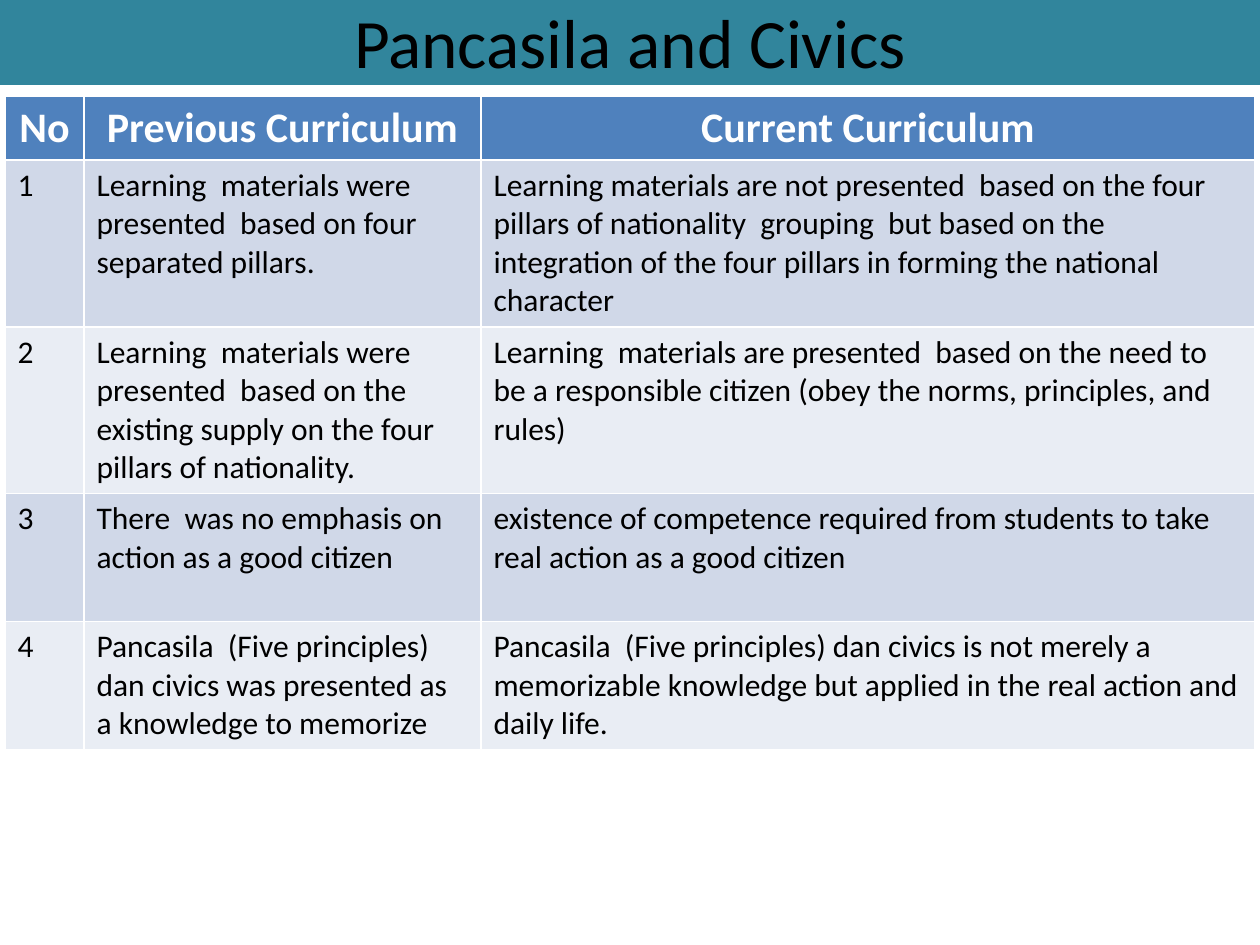
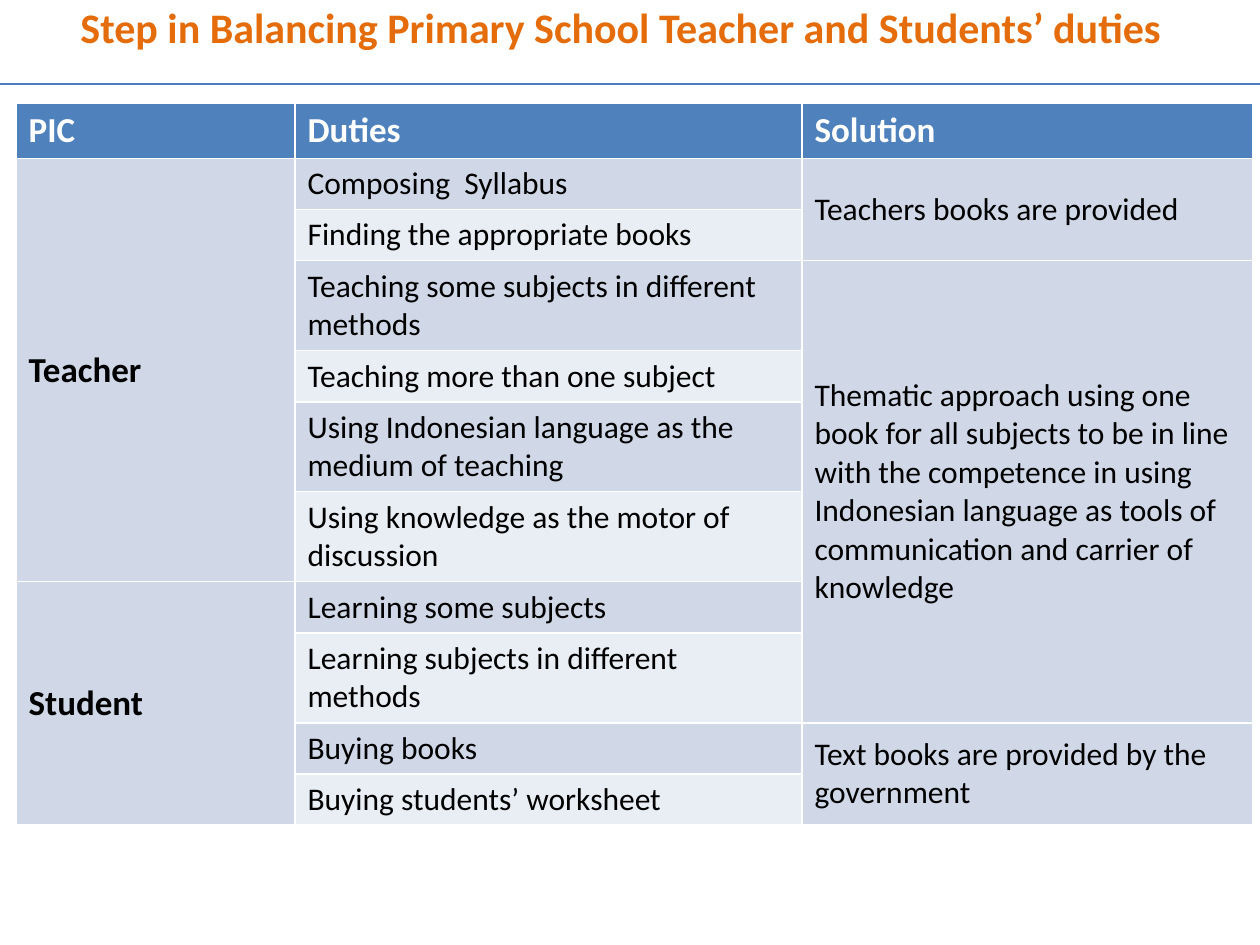
import pptx
import pptx.util
import pptx.dml.color
import pptx.enum.shapes
import pptx.enum.text
import pptx.oxml

RGBColor = pptx.dml.color.RGBColor
PP_ALIGN = pptx.enum.text.PP_ALIGN
MSO_ANCHOR = pptx.enum.text.MSO_ANCHOR
Pt = pptx.util.Pt

BLACK = RGBColor(0x00, 0x00, 0x00)
WHITE = RGBColor(0xFF, 0xFF, 0xFF)
TEAL = RGBColor(0x31, 0x85, 0x9C)
ORANGE = RGBColor(0xE4, 0x6C, 0x0A)
HEADER_BLUE = RGBColor(0x4F, 0x81, 0xBD)
RULE_BLUE = RGBColor(0x4A, 0x7E, 0xBB)
BANDS = (RGBColor(0xD0, 0xD8, 0xE8), RGBColor(0xE9, 0xED, 0xF4))

FONT = "Calibri"
BODY_SIZE = 18
PX_PER_INCH = 126
SLIDE_W, SLIDE_H = 1260, 945
ONE_LINE, TWO_LINES = 51, 90


def px(n):
    return pptx.util.Emu(round(n * 914400 / PX_PER_INCH))


class Deck:
    def __init__(self):
        self.prs = pptx.Presentation()
        self.prs.slide_width = px(SLIDE_W)
        self.prs.slide_height = px(SLIDE_H)
        self.slide = None

    def add_slide(self):
        title_only = self.prs.slide_layouts[5]
        self.slide = self.prs.slides.add_slide(title_only)

    def add_text(self, tf, text, size, color, bold=False,
                 align=PP_ALIGN.LEFT):
        p = tf.paragraphs[0]
        p.alignment = align
        r = p.add_run()
        r.text = text
        r.font.name = FONT
        r.font.size = Pt(size)
        r.font.bold = bold
        r.font.color.rgb = color

    def title(self, text, box, size, color, bold=False, fill=None,
              anchor=MSO_ANCHOR.MIDDLE):
        sp = self.slide.shapes.title
        sp.left, sp.top, sp.width, sp.height = map(px, box)
        if fill is not None:
            sp.fill.solid()
            sp.fill.fore_color.rgb = fill
        tf = sp.text_frame
        tf.word_wrap = True
        tf.auto_size = pptx.enum.text.MSO_AUTO_SIZE.NONE
        tf.vertical_anchor = anchor
        self.add_text(tf, text, size, color, bold, PP_ALIGN.CENTER)

    def rule(self, y):
        """Draw a thin line across the whole slide."""
        line = self.slide.shapes.add_connector(
            pptx.enum.shapes.MSO_CONNECTOR.STRAIGHT,
            0, px(y), px(SLIDE_W), px(y))
        line.line.color.rgb = RULE_BLUE
        line.line.width = Pt(0.75)
        effects = pptx.oxml.parse_xml(
            '<a:effectLst xmlns:a='
            '"http://schemas.openxmlformats.org/drawingml/2006/main"/>')
        line._element.spPr.append(effects)

    def table(self, left, top, widths, heights, rows, header_size,
              header_align=PP_ALIGN.LEFT, anchor=MSO_ANCHOR.TOP,
              bold_first=False):
        """Add a banded table; a None cell is merged into the cell above."""
        table = self.slide.shapes.add_table(
            len(rows), len(widths), px(left), px(top),
            px(sum(widths)), px(sum(heights))).table
        for column, width in zip(table.columns, widths):
            column.width = px(width)
        for row, height in zip(table.rows, heights):
            row.height = px(height)

        for i, row in enumerate(rows):
            for j, text in enumerate(row):
                cell = table.cell(i, j)
                header = i == 0
                cell.fill.solid()
                cell.fill.fore_color.rgb = (
                    HEADER_BLUE if header else BANDS[(i - 1) % 2])
                if text is None:
                    continue
                last = i
                while last + 1 < len(rows) and rows[last + 1][j] is None:
                    last += 1
                if last > i:
                    cell.merge(table.cell(last, j))
                cell.vertical_anchor = anchor
                strong = header or (bold_first and j == 0)
                self.add_text(cell.text_frame, text,
                              header_size if strong else BODY_SIZE,
                              WHITE if header else BLACK, strong,
                              header_align if header else PP_ALIGN.LEFT)


CURRICULUM = [
    ("No", "Previous Curriculum", "Current Curriculum"),
    ("1",
     "Learning  materials were presented  based on four separated pillars.",
     "Learning materials are not presented  based on the four pillars of "
     "nationality  grouping  but based on the integration of the four "
     "pillars in forming the national character"),
    ("2",
     "Learning  materials were presented  based on the existing supply on "
     "the four pillars of nationality.",
     "Learning  materials are presented  based on the need to be a "
     "responsible citizen (obey the norms, principles, and rules)"),
    ("3",
     "There  was no emphasis on action as a good citizen",
     "existence of competence required from students to take real action "
     "as a good citizen"),
    ("4",
     "Pancasila  (Five principles) dan civics was presented as a knowledge "
     "to memorize",
     "Pancasila  (Five principles) dan civics is not merely a memorizable "
     "knowledge but applied in the real action and daily life."),
]

DUTIES = [
    ("PIC", "Duties", "Solution"),
    ("Teacher", "Composing  Syllabus", "Teachers books are provided"),
    (None, "Finding the appropriate books", None),
    (None, "Teaching some subjects in different methods",
     "Thematic approach using one book for all subjects to be in line with "
     "the competence in using Indonesian language as tools of communication "
     "and carrier of knowledge"),
    (None, "Teaching more than one subject", None),
    (None, "Using Indonesian language as the medium of teaching", None),
    (None, "Using knowledge as the motor of discussion", None),
    ("Student", "Learning some subjects", None),
    (None, "Learning subjects in different methods", None),
    (None, "Buying books", "Text books are provided by the government"),
    (None, "Buying students’ worksheet", None),
]


def curriculum_slide(deck):
    deck.add_slide()
    deck.title("Pancasila and Civics", (0, -4, SLIDE_W, 89), 39.6, BLACK,
               fill=TEAL)
    deck.table(5, 96, (79, 397, 774), (63, 167, 166, 128, 127), CURRICULUM,
               header_size=24, header_align=PP_ALIGN.CENTER)


def duties_slide(deck):
    deck.add_slide()
    deck.title("Step in Balancing Primary School Teacher and Students’ duties",
               (16, -5, 1210, 63), 24, ORANGE, bold=True,
               anchor=MSO_ANCHOR.TOP)
    deck.rule(84)
    two_line_rows = (3, 5, 6, 8)
    heights = [54] + [TWO_LINES if i in two_line_rows else ONE_LINE
                      for i in range(1, len(DUTIES))]
    deck.table(16, 103, (279, 507, 451), heights, DUTIES, header_size=20,
               anchor=MSO_ANCHOR.MIDDLE, bold_first=True)


def main():
    deck = Deck()
    curriculum_slide(deck)
    duties_slide(deck)
    deck.prs.save("out.pptx")


if __name__ == "__main__":
    main()
